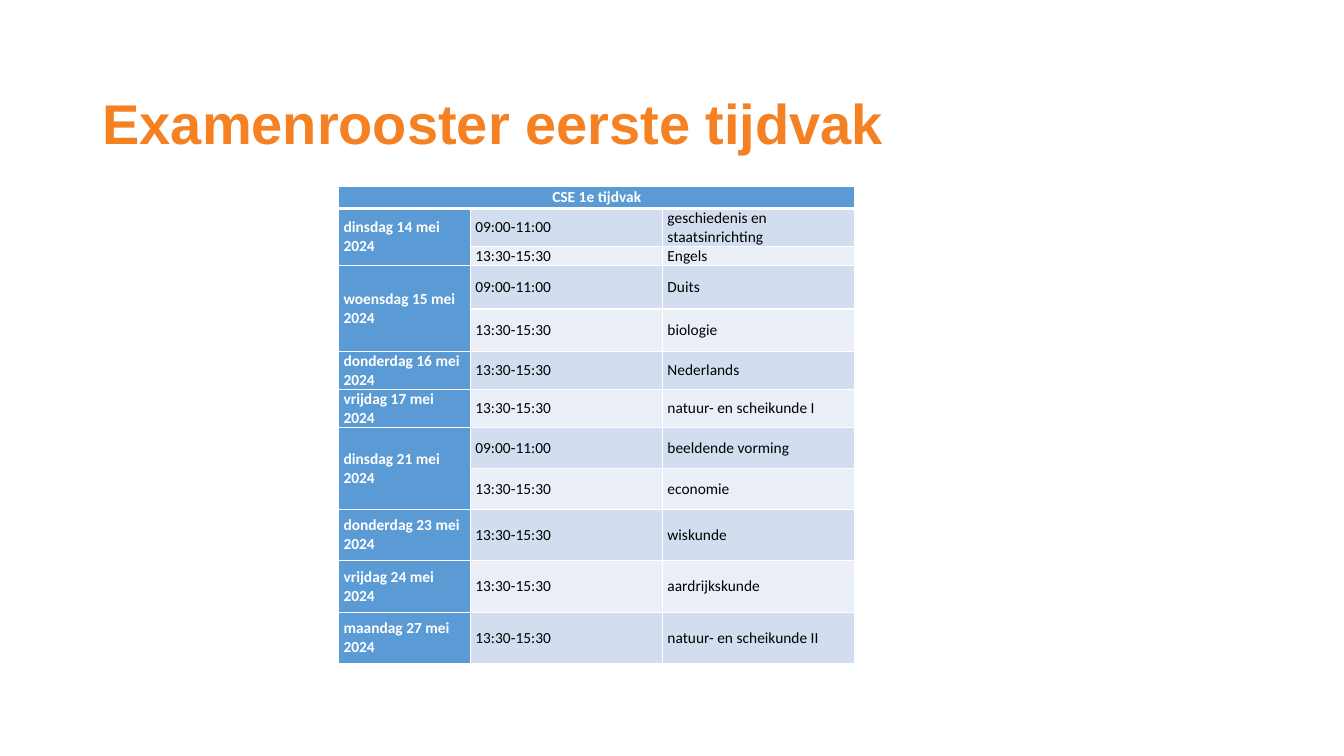
import pptx
import pptx.util
import pptx.dml.color
import pptx.enum.text
import pptx.oxml
import pptx.oxml.ns

Pt = pptx.util.Pt
RGB = pptx.dml.color.RGBColor.from_string
Align = pptx.enum.text.PP_ALIGN
Anchor = pptx.enum.text.MSO_ANCHOR


class Theme:
    orange = "F58123"
    blue = "5B9BD5"
    bands = ("EAEFF7", "D2DEEF")
    white = "FFFFFF"
    black = "000000"
    title = 40
    body = 11


def write(frame, text, size=Theme.body, color=Theme.black, bold=False, font="Calibri", align=Align.LEFT, space=1.0):
    para = frame.paragraphs[0]
    para.alignment = align
    para.line_spacing = space
    run = para.add_run()
    run.text = text
    run.font.size = Pt(size)
    run.font.name = font
    run.font.bold = bold
    run.font.color.rgb = RGB(color)


def edge(cell, low):
    for side in "LRTB":
        width = Pt(low if side == "B" else 1)
        cell._tc.get_or_add_tcPr().append(pptx.oxml.parse_xml(
            f'<a:ln{side} {pptx.oxml.ns.nsdecls("a")} w="{width}"><a:solidFill>'
            f'<a:srgbClr val="{Theme.white}"/></a:solidFill></a:ln{side}>'))


deck = pptx.Presentation()
deck.slide_width, deck.slide_height = Pt(960), Pt(540)
slide = deck.slides.add_slide(deck.slide_layouts[5])

title = slide.shapes.title
title.left, title.top, title.width, title.height = Pt(66), Pt(48.75), Pt(828), Pt(83.5)
frame = title.text_frame
frame.auto_size = pptx.enum.text.MSO_AUTO_SIZE.NONE
frame.vertical_anchor = Anchor.MIDDLE
write(frame, "Examenrooster eerste tijdvak", size=Theme.title, color=Theme.orange, bold=True, font="Arial", space=0.9)

early, late = "09:00-11:00", "13:30-15:30"
days = [
    ("dinsdag 14 mei 2024", [(early, "geschiedenis en staatsinrichting", 27), (late, "Engels", 13.5)]),
    ("woensdag 15 mei 2024", [(early, "Duits", 31), (late, "biologie", 30.2)]),
    ("donderdag 16 mei 2024", [(late, "Nederlands", 27.1)]),
    ("vrijdag 17 mei 2024", [(late, "natuur- en scheikunde I", 27.1)]),
    ("dinsdag 21 mei 2024", [(early, "beeldende vorming", 29.5), (late, "economie", 29)]),
    ("donderdag 23 mei 2024", [(late, "wiskunde", 36.8)]),
    ("vrijdag 24 mei 2024", [(late, "aardrijkskunde", 36.8)]),
    ("maandag 27 mei 2024", [(late, "natuur- en scheikunde II", 36.8)]),
]
exams = [exam for day, slots in days for exam in slots]
tall = [15.8] + [exam[2] for exam in exams]
wide = [94.2, 137.2, 137.2]

grid = slide.shapes.add_table(len(tall), len(wide), Pt(242), Pt(133.1), Pt(sum(wide)), Pt(sum(tall))).table
grid.first_col = True
for col, width in zip(grid.columns, wide):
    col.width = Pt(width)
for row, height in zip(grid.rows, tall):
    row.height = Pt(height)

for i, row in enumerate(grid.rows):
    for j, cell in enumerate(row.cells):
        cell.margin_left = cell.margin_right = Pt(3.4)
        cell.margin_top = cell.margin_bottom = Pt(0)
        cell.vertical_anchor = Anchor.MIDDLE
        edge(cell, 1 if i else 3)
        cell.fill.solid()
        cell.fill.fore_color.rgb = RGB(Theme.bands[i % 2] if i and j else Theme.blue)

head = grid.cell(0, 0)
head.merge(grid.cell(0, 2))
write(head.text_frame, "CSE 1e tijdvak", color=Theme.white, bold=True, align=Align.CENTER)

line = 1
for day, slots in days:
    first = grid.cell(line, 0)
    if len(slots) > 1:
        first.merge(grid.cell(line + len(slots) - 1, 0))
    write(first.text_frame, day, color=Theme.white, bold=True)
    for time, topic, height in slots:
        write(grid.cell(line, 1).text_frame, time)
        write(grid.cell(line, 2).text_frame, topic)
        line += 1

deck.save("out.pptx")
